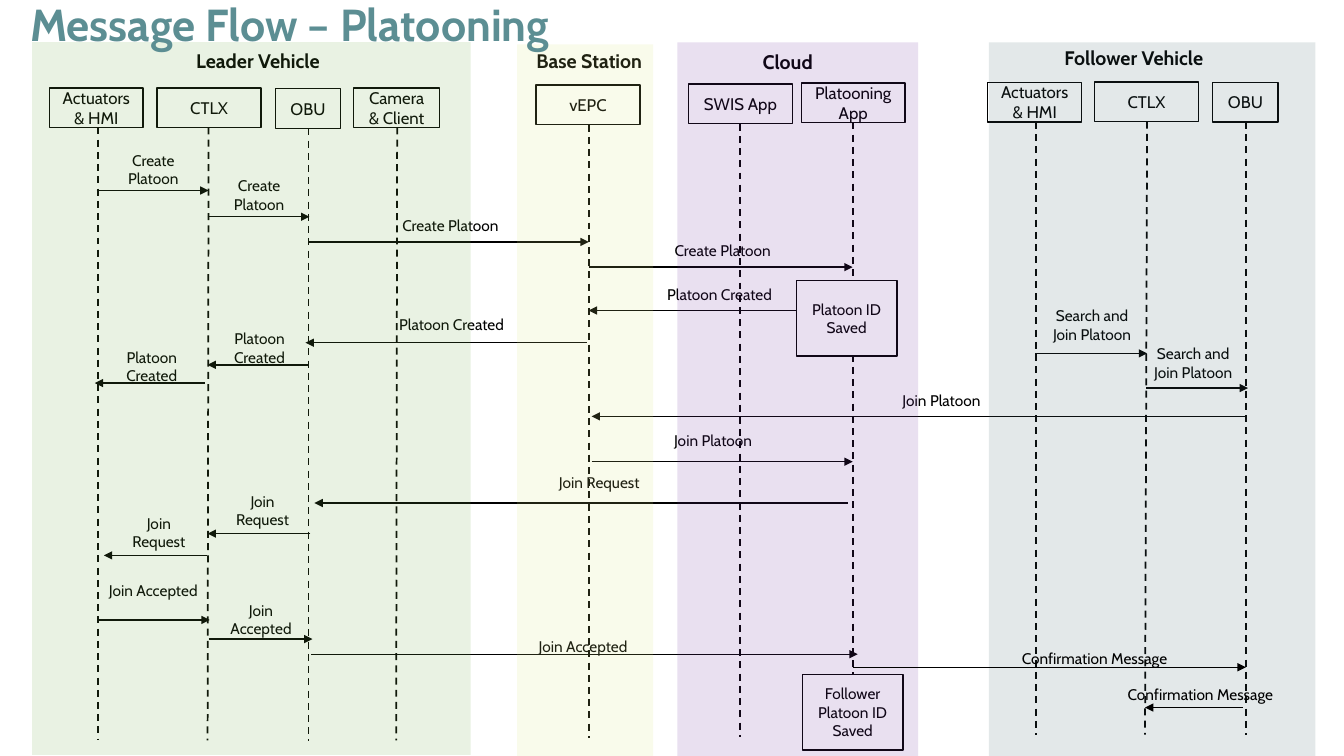
from dataclasses import dataclass

import lxml.etree
import pptx
import pptx.dml.color
import pptx.enum.dml
import pptx.enum.shapes
import pptx.enum.text
import pptx.oxml.ns
import pptx.util

ALIGN = pptx.enum.text.PP_ALIGN
ANCHOR = pptx.enum.text.MSO_ANCHOR


@dataclass(frozen=True)
class Theme:
    font: str = "Cabin"
    ink: str = "000000"
    paper: str = "FFFFFF"
    title: str = "5C8E93"
    leader: str = "70AD47"
    follower: str = "456A6E"
    cloud: str = "7030A0"
    station: str = "DAE57E"
    band_alpha: int = 15
    title_size: int = 32
    header_size: int = 14
    box_size: int = 12
    label_size: int = 11
    line: float = 1
    lifeline: float = 1.25


T = Theme()
HEAD_H = 28.3
LIFELINE_H = 437.8

# text, left, top, width
HEADERS = [
    ("Leader Vehicle", 127.4, 31.7, 113.8),
    ("Base Station", 351.4, 31.7, 139),
    ("Cloud", 493.2, 32.4, 139),
    ("Follower Vehicle", 732.2, 29.5, 155.5),
]

# name, left, top, width, lifeline x at its top and at its foot
PARTICIPANTS = [
    ("Actuators & HMI", 35.3, 62.8, 67, 69.8, 69.8),
    ("CTLX", 112.3, 62.8, 74.2, 149, 148.3),
    ("OBU", 196.6, 63.4, 46.8, 220.3, 220.3),
    ("Camera & Client", 252.7, 62.8, 61.2, 283.7, 283),
    ("vEPC", 383, 60.8, 74.2, 420.5, 420.5),
    ("SWIS App", 491.8, 60, 74.2, 528.5, 528.5),
    ("Platooning App", 572.4, 59.2, 74.2, 609.1, 609.1),
    ("Actuators & HMI", 705.6, 58.8, 67, 740.2, 740.2),
    ("CTLX", 781.9, 58.6, 74.2, 819.4, 817.9),
    ("OBU", 866.2, 58.8, 46.8, 889.9, 889.9),
]

# text, arrow start x, arrow end x, arrow y, label left, label top, label width
MESSAGES = [
    ("Create Platoon", 69.1, 149, 136.1, 70.6, 104.4, 77.8),
    ("Create Platoon", 148.3, 221, 154.8, 149.8, 122.4, 70.6),
    ("Create Platoon", 220.3, 420.5, 172.8, 224.6, 150.5, 194.4),
    ("Create Platoon", 420.5, 609.1, 190.8, 424.8, 168.5, 182.9),
    ("Platoon Created", 609.1, 420.5, 221.8, 422.6, 200.2, 182.9),
    ("Platoon Created", 419, 218.2, 244.8, 225.4, 221.8, 194.4),
    ("Platoon Created", 220.3, 148.3, 260.6, 150.5, 231.8, 69.8),
    ("Platoon Created", 146.2, 67.7, 273.6, 70.6, 244.8, 75.6),
    ("Search and Join Platoon", 739.4, 819.4, 252.4, 741.6, 215.3, 77),
    ("Search and Join Platoon", 818.6, 891.4, 277.2, 817.2, 242.3, 70.2),
    ("Join Platoon", 889.9, 422.6, 297.4, 446.4, 275.8, 452.2),
    ("Join Platoon", 422.6, 609.1, 329.8, 419, 304.6, 180.7),
    ("Join Request", 605.5, 224.6, 359.3, 243.4, 334.1, 369.4),
    ("Join Request", 221.8, 148.3, 381.2, 151.9, 347.8, 71.3),
    ("Join Request", 147.6, 74.2, 396.7, 77.8, 363.6, 71.3),
    ("Join Accepted", 69.8, 149.8, 442.8, 70.6, 411.8, 77.8),
    ("Join Accepted", 149, 223.2, 456.5, 150.5, 425.5, 72),
    ("Join Accepted", 222.5, 612.7, 467.3, 227.5, 451.4, 378),
]
CONFIRMATIONS = [
    ("Confirmation Message", 609.1, 889.9, 476.6, 658.8, 460.1, 246.2),
    ("Confirmation Message", 887.8, 817.9, 505.4, 734.4, 486, 246.2),
]

# text, left, top
NOTES = [
    ("Follower Platoon ID Saved", 573.1, 481.7),
    ("Platoon ID Saved", 568.8, 200.2),
]

# colour, left, top, width, height
BANDS = [
    (T.leader, 23, 30.2, 313.2, 509),
    (T.follower, 706.3, 30.2, 233.3, 509.8),
    (T.cloud, 483.8, 30.2, 172.1, 509.8),
    (T.station, 369.4, 31.7, 97.2, 508.3),
]


def rgb(color):
    return pptx.dml.color.RGBColor.from_string(color)


def points(*lengths):
    return [pptx.util.Pt(length) for length in lengths]


def add_xml(parent, tag, **attributes):
    lxml.etree.SubElement(parent, pptx.oxml.ns.qn(tag), attributes)


def write(sp, text, size, color=T.ink, bold=False, align=ALIGN.CENTER, anchor=ANCHOR.MIDDLE):
    tf = sp.text_frame
    tf.word_wrap = True
    tf.vertical_anchor = anchor
    p = tf.paragraphs[0]
    p.text = text
    p.alignment = align
    font = p.runs[0].font
    font.name, font.size, font.bold = T.font, pptx.util.Pt(size), bold
    font.color.rgb = rgb(color)
    return p


def add_label(s, text, left, top, width, size=T.label_size, bold=False):
    sp = s.shapes.add_textbox(*points(left, top, width, 20))
    write(sp, text, size, bold=bold, anchor=ANCHOR.TOP)
    sp.text_frame.auto_size = pptx.enum.text.MSO_AUTO_SIZE.SHAPE_TO_FIT_TEXT


def add_rect(s, left, top, width, height):
    sp = s.shapes.add_shape(pptx.enum.shapes.MSO_SHAPE.RECTANGLE,
                            *points(left, top, width, height))
    sp.shadow.inherit = False
    return sp


def add_box(s, text, left, top, width, height, size, fill=None):
    sp = add_rect(s, left, top, width, height)
    if fill:
        sp.fill.solid()
        sp.fill.fore_color.rgb = rgb(fill)
    else:
        sp.fill.background()
    sp.line.color.rgb = rgb(T.ink)
    sp.line.width = pptx.util.Pt(T.line)
    write(sp, text, size)


def add_band(s, color, left, top, width, height):
    """Translucent column laid over one group of participants."""
    sp = add_rect(s, left, top, width, height)
    sp.line.fill.background()
    sp.fill.solid()
    sp.fill.fore_color.rgb = rgb(color)
    clr = sp._element.spPr.find(".//" + pptx.oxml.ns.qn("a:srgbClr"))
    add_xml(clr, "a:alpha", val=str(T.band_alpha * 1000))


def add_line(s, x1, y1, x2, y2, width):
    cn = s.shapes.add_connector(pptx.enum.shapes.MSO_CONNECTOR.STRAIGHT,
                                *points(x1, y1, x2, y2))
    cn.line.color.rgb = rgb(T.ink)
    cn.line.width = pptx.util.Pt(width)
    add_xml(cn._element.spPr, "a:effectLst")
    return cn


def add_participant(s, name, left, top, width, x, foot_x):
    add_box(s, name, left, top, width, HEAD_H, T.box_size)
    y = top + HEAD_H
    cn = add_line(s, x, y, foot_x, y + LIFELINE_H, T.lifeline)
    cn.line.dash_style = pptx.enum.dml.MSO_LINE.DASH


def add_message(s, text, x1, x2, y, left, top, width):
    cn = add_line(s, x1, y, x2, y, T.line)
    ln = cn._element.spPr.find(pptx.oxml.ns.qn("a:ln"))
    add_xml(ln, "a:tailEnd", type="triangle")
    add_label(s, text, left, top, width)


def add_title(s, text):
    sp = s.shapes.add_textbox(*points(14.4, 2.9, 918.7, 32.4))
    p = write(sp, text, T.title_size, T.title, True, ALIGN.LEFT)
    p.line_spacing = 0.9


def main():
    prs = pptx.Presentation()
    prs.slide_width, prs.slide_height = points(960, 540)
    s = prs.slides.add_slide(prs.slide_layouts[6])
    for header in HEADERS:
        add_label(s, *header, size=T.header_size, bold=True)
    for participant in PARTICIPANTS:
        add_participant(s, *participant)
    for message in MESSAGES:
        add_message(s, *message)
    for text, left, top in NOTES:
        add_box(s, text, left, top, 72, 54, T.label_size, T.paper)
    for band in BANDS:
        add_band(s, *band)
    add_title(s, "Message Flow – Platooning")
    for message in CONFIRMATIONS:
        add_message(s, *message)
    prs.save("out.pptx")


if __name__ == "__main__":
    main()
